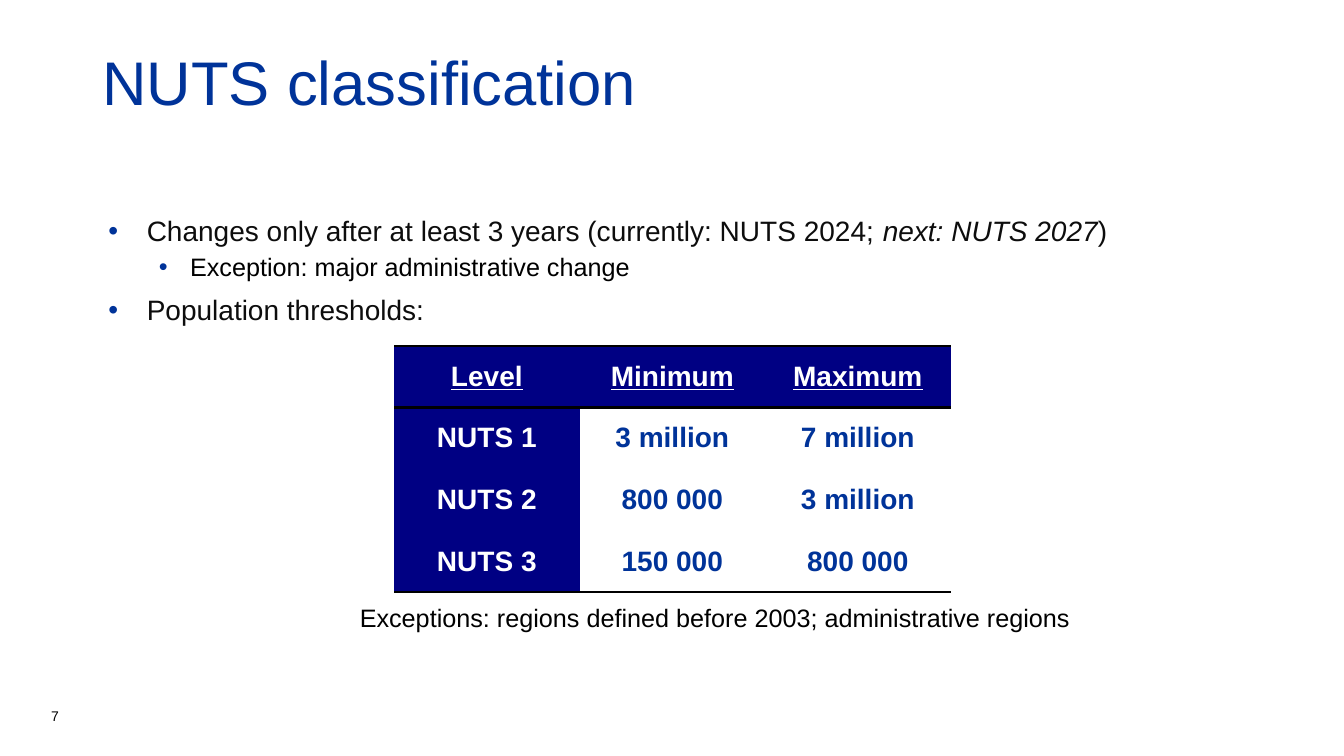
from dataclasses import dataclass

from lxml.etree import SubElement
from pptx import Presentation
from pptx.dml.color import RGBColor
from pptx.enum.text import MSO_ANCHOR as Anchor, MSO_AUTO_SIZE as AutoSize, PP_ALIGN as Align
from pptx.oxml.ns import qn
from pptx.util import Pt

COLORS = {
    "blue": "003399",
    "navy": "000083",
    "white": "FFFFFF",
    "black": "000000",
    "ink": "0D0D0D",
}
FONT = "Arial"
NO_TABLE_STYLE = "{2D5ABB26-0587-4C30-8999-92F81FD0307C}"


@dataclass(frozen=True)
class Box:
    left: float
    top: float
    width: float
    height: float

    def lengths(self):
        return Pt(self.left), Pt(self.top), Pt(self.width), Pt(self.height)


@dataclass(frozen=True)
class Level:
    margin: float
    hanging: float
    before: float
    size: float
    color: str


@dataclass(frozen=True)
class Point:
    level: int
    plain: str
    italic: str = ""
    ending: str = ""


LEVELS = (
    Level(27.36, 27.36, 10, 20, "ink"),
    Level(58.32, 22.32, 5, 18, "black"),
)
POINTS = (
    Point(0, "Changes only after at least 3 years (currently: NUTS 2024; ",
          "next: NUTS 2027", ")"),
    Point(1, "Exception: major administrative change"),
    Point(0, "Population thresholds:"),
)
THRESHOLDS = (
    ("Level", "Minimum", "Maximum"),
    ("NUTS 1", "3 million", "7 million"),
    ("NUTS 2", "800 000", "3 million"),
    ("NUTS 3", "150 000", "800 000"),
)


def rgb(color: str) -> RGBColor:
    return RGBColor.from_string(COLORS[color])


def style(paragraph, size: float, color: str) -> None:
    font = paragraph.font
    font.name, font.size = FONT, Pt(size)
    font.color.rgb = rgb(color)


def set_insets(frame, inset: float) -> None:
    frame.margin_left = frame.margin_right = Pt(inset)
    frame.margin_top = frame.margin_bottom = Pt(inset)


def add_bullet(paragraph, level: Level) -> None:
    properties = paragraph._p.get_or_add_pPr()
    properties.set("marL", str(Pt(level.margin)))
    properties.set("indent", str(-Pt(level.hanging)))
    bullet_color = SubElement(properties, qn("a:buClr"))
    SubElement(bullet_color, qn("a:srgbClr"), val=COLORS["blue"])
    SubElement(properties, qn("a:buFont"), typeface=FONT)
    SubElement(properties, qn("a:buChar"), char="•")


def add_title(slide, text: str, box: Box) -> None:
    title = slide.shapes.title
    title.left, title.top, title.width, title.height = box.lengths()
    frame = title.text_frame
    frame.text = text
    frame.auto_size = AutoSize.NONE
    frame.vertical_anchor = Anchor.MIDDLE
    heading = frame.paragraphs[0]
    heading.alignment, heading.line_spacing = Align.LEFT, 0.9
    style(heading, 44, "blue")


def add_points(slide, points: tuple[Point, ...], box: Box) -> None:
    frame = slide.shapes.add_textbox(*box.lengths()).text_frame
    frame.word_wrap = True
    set_insets(frame, 11.52)
    for index, point in enumerate(points):
        level = LEVELS[point.level]
        paragraph = frame.add_paragraph() if index else frame.paragraphs[0]
        paragraph.level = point.level
        paragraph.line_spacing = 0.9
        if index:
            paragraph.space_before = Pt(level.before)
        add_bullet(paragraph, level)
        style(paragraph, level.size, level.color)
        paragraph.add_run().text = point.plain
        if point.italic:
            emphasis = paragraph.add_run()
            emphasis.text = point.italic
            emphasis.font.italic = True
            paragraph.add_run().text = point.ending


def add_label(slide, text: str, box: Box, size: float, inset: float, anchor: Anchor) -> None:
    frame = slide.shapes.add_textbox(*box.lengths()).text_frame
    frame.word_wrap = True
    frame.vertical_anchor = anchor
    set_insets(frame, inset)
    frame.text = text
    style(frame.paragraphs[0], size, "black")


def add_border(cell, side: str) -> None:
    line = SubElement(cell._tc.get_or_add_tcPr(), qn(f"a:{side}"), w=str(Pt(2)))
    fill = SubElement(line, qn("a:solidFill"))
    SubElement(fill, qn("a:srgbClr"), val=COLORS["black"])


def add_thresholds(slide, rows: tuple[tuple[str, ...], ...], box: Box) -> None:
    graphic = slide.shapes.add_table(len(rows), len(rows[0]), *box.lengths())
    table = graphic.table
    table.first_row = table.horz_banding = False
    next(graphic.element.iter(qn("a:tableStyleId"))).text = NO_TABLE_STYLE
    for row, values in enumerate(rows):
        for column, value in enumerate(values):
            cell = table.cell(row, column)
            is_header = row == 0
            is_dark = is_header or column == 0
            if is_header:
                add_border(cell, "lnT")
            if is_header or row == len(rows) - 1:
                add_border(cell, "lnB")
            cell.fill.solid()
            cell.fill.fore_color.rgb = rgb("navy" if is_dark else "white")
            cell.vertical_anchor = Anchor.MIDDLE
            cell.text = value
            paragraph = cell.text_frame.paragraphs[0]
            paragraph.alignment = Align.CENTER
            style(paragraph, 20, "white" if is_dark else "blue")
            paragraph.font.bold = True
            paragraph.font.underline = is_header


def main() -> None:
    deck = Presentation()
    deck.slide_width, deck.slide_height = Pt(960), Pt(540)
    slide = deck.slides.add_slide(deck.slide_layouts[5])
    add_title(slide, "NUTS classification", Box(66, 28.8, 828, 64))
    add_points(slide, POINTS, Box(66, 144, 828, 100))
    add_label(slide, "7", Box(29.5, 494.6, 216, 28.8), 10, 7.2, Anchor.BOTTOM)
    add_thresholds(slide, THRESHOLDS, Box(281.5, 247, 397.5, 176))
    add_label(slide, "Exceptions: regions defined before 2003; administrative regions",
              Box(257, 430.5, 530, 24), 18, 0, Anchor.TOP)
    deck.save("out.pptx")


if __name__ == "__main__":
    main()
